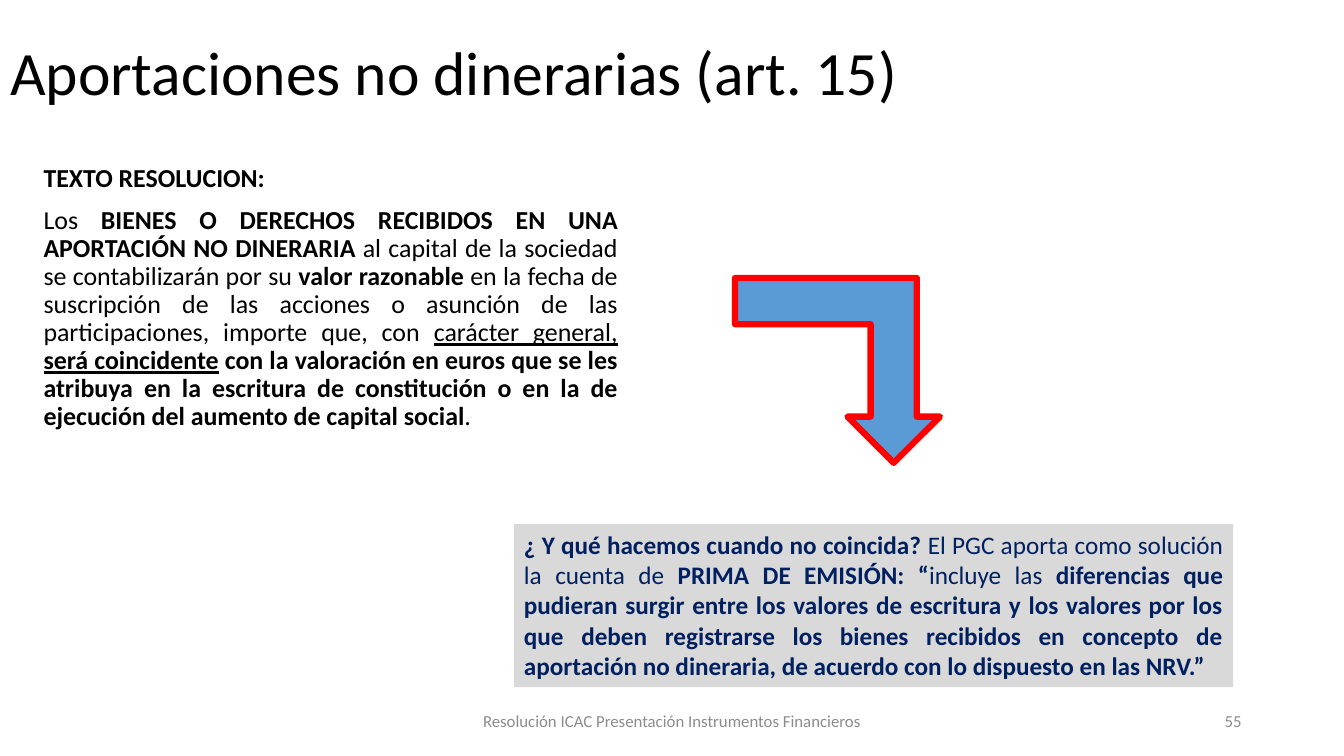
from dataclasses import dataclass

from pptx import Presentation
from pptx.dml.color import RGBColor
from pptx.enum.shapes import MSO_SHAPE
from pptx.enum.text import MSO_ANCHOR, MSO_AUTO_SIZE, PP_ALIGN
from pptx.shapes.autoshape import Shape
from pptx.slide import Slide
from pptx.util import Inches, Pt

LEFT, CENTER, RIGHT, JUSTIFY = PP_ALIGN.LEFT, PP_ALIGN.CENTER, PP_ALIGN.RIGHT, PP_ALIGN.JUSTIFY
TOP, MIDDLE = MSO_ANCHOR.TOP, MSO_ANCHOR.MIDDLE
FIXED = MSO_AUTO_SIZE.NONE
RECTANGLE, BENT_ARROW = MSO_SHAPE.RECTANGLE, MSO_SHAPE.BENT_UP_ARROW

BLACK = RGBColor(0x00, 0x00, 0x00)
GRAY = RGBColor(0x8C, 0x8C, 0x8C)
PALE_GRAY = RGBColor(0xD9, 0xD9, 0xD9)
NAVY = RGBColor(0x00, 0x20, 0x60)
BLUE = RGBColor(0x5B, 0x9B, 0xD5)
RED = RGBColor(0xFF, 0x00, 0x00)

FONT = "Calibri"
SLIDE_WIDTH, SLIDE_HEIGHT = Inches(13.33), Inches(7.5)
COLUMNS, ROWS = 160, 90
TITLE_ONLY = 5


@dataclass(frozen=True)
class Area:
    column: float
    row: float
    columns: float
    rows: float

    def box(self) -> tuple[int, int, int, int]:
        return (
            round(self.column * SLIDE_WIDTH / COLUMNS),
            round(self.row * SLIDE_HEIGHT / ROWS),
            round(self.columns * SLIDE_WIDTH / COLUMNS),
            round(self.rows * SLIDE_HEIGHT / ROWS),
        )


@dataclass(frozen=True)
class Span:
    text: str
    bold: bool = False
    underline: bool = False


@dataclass(frozen=True)
class Style:
    size: float
    color: RGBColor
    align: PP_ALIGN
    anchor: MSO_ANCHOR = TOP
    line_spacing: float = 1.0
    space_before: float = 0


@dataclass(frozen=True)
class Passage:
    area: Area
    style: Style
    paragraphs: list[list[Span]]


TITLE = Passage(
    Area(0, 0.25, 160, 17.4),
    Style(44, BLACK, LEFT, MIDDLE, 0.9),
    [[Span("Aportaciones no dinerarias (art. 15)")]],
)
FOOTER_STYLE = Style(12, GRAY, CENTER, MIDDLE)
PAGE_STYLE = Style(12, GRAY, RIGHT, MIDDLE)
TEXTS = [
    Passage(
        Area(4, 19.1, 70.7, 33.7),
        Style(18.5, BLACK, JUSTIFY, TOP, 0.9, 10),
        [
            [Span("TEXTO RESOLUCION:", bold=True)],
            [
                Span("Los "),
                Span("BIENES O DERECHOS RECIBIDOS EN UNA APORTACIÓN NO DINERARIA ", bold=True),
                Span("al capital de la sociedad se contabilizarán por su "),
                Span("valor razonable ", bold=True),
                Span("en la fecha de suscripción de las acciones o asunción de las "
                     "participaciones, importe que, con "),
                Span("carácter general, ", underline=True),
                Span("será coincidente", bold=True, underline=True),
                Span(" con la valoración en euros que se les atribuya en la escritura de "
                     "constitución o en la de ejecución del aumento de capital social", bold=True),
                Span("."),
            ],
        ],
    ),
    Passage(Area(53, 83.4, 54, 4.8), FOOTER_STYLE,
            [[Span("Resolución ICAC Presentación Instrumentos Financieros")]]),
    Passage(Area(113, 83.4, 36, 4.8), PAGE_STYLE, [[Span("55")]]),
]
ANSWER = Passage(
    Area(61.2, 62.4, 85.6, 19.4),
    Style(18, NAVY, JUSTIFY),
    [[
        Span("¿ Y qué hacemos cuando no coincida? ", bold=True),
        Span("El PGC aporta como solución la cuenta de "),
        Span("PRIMA DE EMISIÓN: “", bold=True),
        Span("incluye las "),
        Span("diferencias que pudieran surgir entre los valores de escritura y los valores "
             "por los que deben registrarse los bienes recibidos en concepto de aportación "
             "no dineraria, de acuerdo con lo dispuesto en las NRV.”", bold=True),
    ]],
)
ARROW_AREA = Area(87.5, 33.1, 24.4, 22)


def write(holder: Shape, passage: Passage) -> None:
    style = passage.style
    frame = holder.text_frame
    frame.word_wrap = True
    frame.auto_size = FIXED
    frame.vertical_anchor = style.anchor
    for index, spans in enumerate(passage.paragraphs):
        paragraph = frame.add_paragraph() if index else frame.paragraphs[0]
        paragraph.alignment = style.align
        paragraph.line_spacing = style.line_spacing
        paragraph.space_before = Pt(style.space_before)
        for span in spans:
            run = paragraph.add_run()
            run.text = span.text
            run.font.name = FONT
            run.font.size = Pt(style.size)
            run.font.color.rgb = style.color
            run.font.bold = span.bold
            run.font.underline = span.underline


def add_title(slide: Slide, passage: Passage) -> None:
    title = slide.shapes.title
    title.left, title.top, title.width, title.height = passage.area.box()
    write(title, passage)


def add_filled(slide: Slide, preset: MSO_SHAPE, area: Area, fill: RGBColor) -> Shape:
    shape = slide.shapes.add_shape(preset, *area.box())
    shape.shadow.inherit = False
    shape.fill.solid()
    shape.fill.fore_color.rgb = fill
    shape.line.fill.background()
    return shape


def add_down_arrow(slide: Slide, area: Area) -> None:
    arrow = add_filled(slide, BENT_ARROW, area, BLUE)
    arrow.line.color.rgb = RED
    arrow.line.width = Pt(4.5)
    arrow.element.spPr.xfrm.set("flipV", "1")


def main() -> None:
    deck = Presentation()
    deck.slide_width, deck.slide_height = SLIDE_WIDTH, SLIDE_HEIGHT
    slide = deck.slides.add_slide(deck.slide_layouts[TITLE_ONLY])
    add_title(slide, TITLE)
    for passage in TEXTS:
        write(slide.shapes.add_textbox(*passage.area.box()), passage)
    write(add_filled(slide, RECTANGLE, ANSWER.area, PALE_GRAY), ANSWER)
    add_down_arrow(slide, ARROW_AREA)
    deck.save("out.pptx")


if __name__ == "__main__":
    main()
